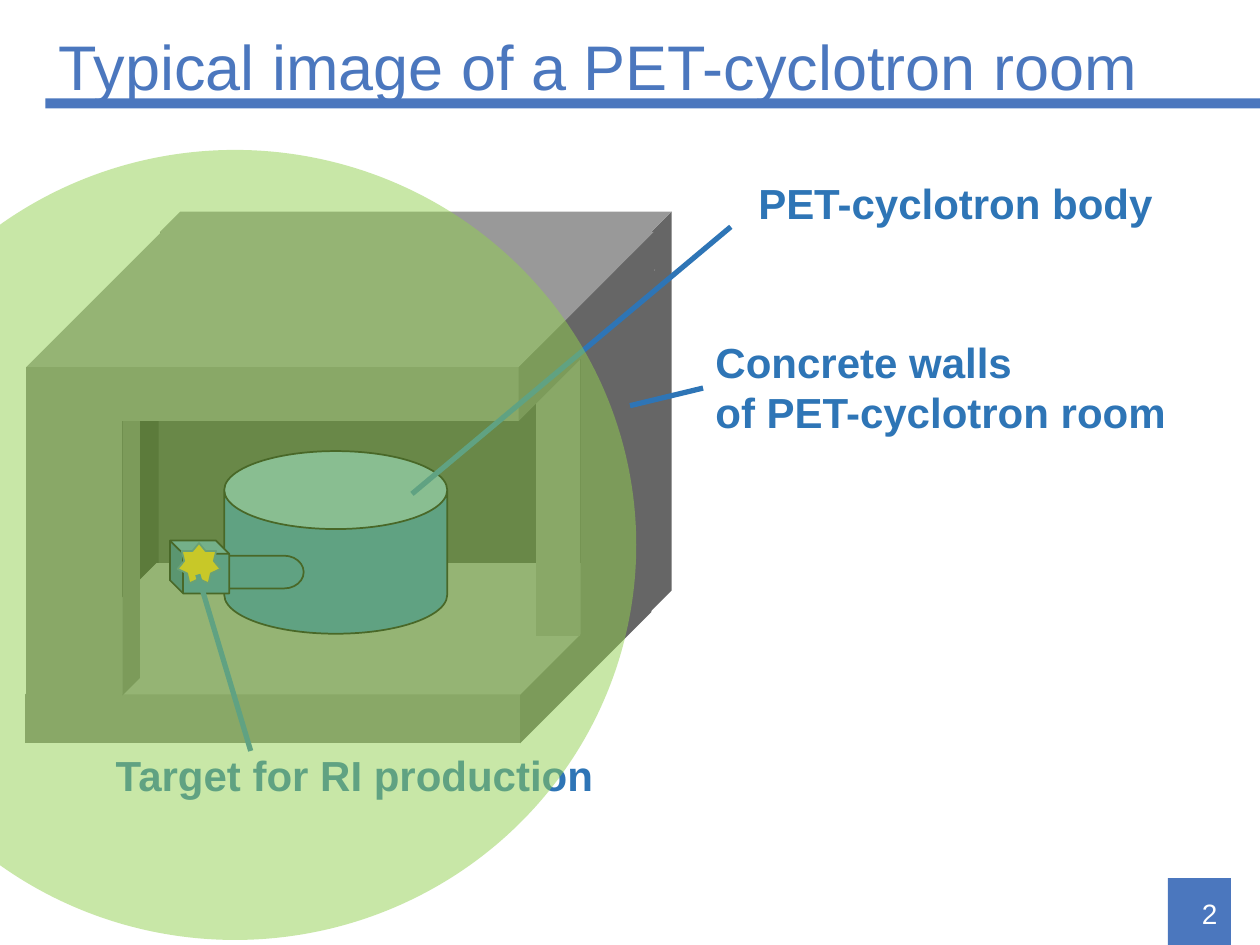
from collections import namedtuple

from lxml.etree import SubElement
from pptx import Presentation
from pptx.dml.color import RGBColor
from pptx.enum.shapes import MSO_CONNECTOR, MSO_SHAPE as SHAPE
from pptx.enum.text import MSO_ANCHOR as ANCHOR, MSO_AUTO_SIZE as AUTO, PP_ALIGN as ALIGN
from pptx.oxml.ns import qn
from pptx.util import Inches, Pt

# The slide is a grid of 100 columns by 75 rows of square cells.
CELL = Inches(0.1)
COLUMNS, ROWS = 100, 75

FONT = "Arial"
ACCENT, LABEL, WHITE = "4B77BE", "2E75B6", "FFFFFF"
CONCRETE, SIDE_SHADE, BACK_SHADE = "808080", "262626", "404040"
OUTLINE, GOLD, GOLD_EDGE, FIELD = "000000", "FFC000", "43739E", "92D050"

Box = namedtuple("Box", "left top width height")


def inside(box, left, top, width, height):
    """Return a box whose offset is counted from the corner of another."""
    return Box(box.left + left, box.top + top, width, height)


def cells(*values):
    return [round(value * CELL) for value in values]


def color(hex_string):
    return RGBColor.from_string(hex_string)


def add_shape(slide, kind, box, fill, line=None, adjust=None, alpha=None):
    shape = slide.shapes.add_shape(kind, *cells(*box))
    shape.shadow.inherit = False
    shape.fill.solid()
    shape.fill.fore_color.rgb = color(fill)
    if line:
        shape.line.color.rgb = color(line)
        shape.line.width = Pt(1)
    else:
        shape.line.fill.background()
    if adjust is not None:
        shape.adjustments[0] = adjust
    if alpha is not None:
        fill_color = shape._element.spPr.find(qn("a:solidFill"))[0]
        SubElement(fill_color, qn("a:alpha"), val=str(alpha * 1000))
    return shape


def add_text(slide, box, lines, size=24, ink=LABEL, bold=False, align=ALIGN.LEFT,
             anchor=ANCHOR.TOP, wrap=True, spacing=None):
    frame = slide.shapes.add_textbox(*cells(*box)).text_frame
    frame.word_wrap = wrap
    frame.auto_size = AUTO.NONE if wrap else AUTO.SHAPE_TO_FIT_TEXT
    frame.vertical_anchor = anchor
    for index, line in enumerate(lines):
        paragraph = frame.add_paragraph() if index else frame.paragraphs[0]
        paragraph.alignment = align
        paragraph.line_spacing = spacing
        run = paragraph.add_run()
        run.text = line
        run.font.name = FONT
        run.font.size = Pt(size)
        run.font.bold = bold
        run.font.color.rgb = color(ink)


def add_line(slide, start, end):
    line = slide.shapes.add_connector(MSO_CONNECTOR.STRAIGHT, *cells(*start, *end))
    line.line.color.rgb = color(LABEL)
    line.line.width = Pt(3)
    SubElement(line._element.spPr, qn("a:effectLst"))


def add_header(slide, box, title):
    add_shape(slide, SHAPE.RECTANGLE, inside(box, 0, 6, box.width, 0.8), ACCENT)
    add_text(slide, inside(box, 0.1, 0, 90, 7.5), [title], size=36, ink=ACCENT,
             anchor=ANCHOR.MIDDLE, spacing=0.9)


def add_page_number(slide, box, number):
    add_shape(slide, SHAPE.RECTANGLE, box, ACCENT)
    add_text(slide, inside(box, 0.1, 0.8, 4.8, 4), [str(number)], size=16, ink=WHITE,
             align=ALIGN.RIGHT, anchor=ANCHOR.MIDDLE)


def add_concrete_room(slide, box):
    parts = [
        (SHAPE.RECTANGLE, (4.3, 11.4, 6.5, 22.5), SIDE_SHADE, None),
        (SHAPE.CUBE, (10.7, 0, 40.6, 31.7), CONCRETE, 0.051),    # far wall
        (SHAPE.RECTANGLE, (10.6, 3.5, 38.2, 26.7), BACK_SHADE, None),
        (SHAPE.CUBE, (0, 27.9, 49.7, 14.3), CONCRETE, 0.729),    # floor
        (SHAPE.CUBE, (40.5, 4.6, 9.5, 29.1), CONCRETE, 0.624),   # right wall
        (SHAPE.CUBE, (0.1, 15.1, 9, 23.3), CONCRETE, 0.154),     # left wall
        (SHAPE.CUBE, (0.1, 1.6, 49.8, 15), CONCRETE, 0.715),     # ceiling
    ]
    for kind, place, fill, adjust in parts:
        add_shape(slide, kind, inside(box, *place), fill, adjust=adjust)


def add_cyclotron(slide, box):
    """Draw the body, the beam pipe and the target with its radiation star."""
    add_shape(slide, SHAPE.CAN, inside(box, 4.3, 0, 17.7, 14.5), LABEL, OUTLINE, adjust=0.427)
    pipe = add_shape(slide, SHAPE.FLOWCHART_DIRECT_ACCESS_STORAGE,
                     inside(box, 1.3, 8.3, 9.3, 2.6), LABEL, OUTLINE)
    pipe.rotation = 180
    target = add_shape(slide, SHAPE.CUBE, inside(box, 0, 7.1, 4.7, 4.2), LABEL, OUTLINE)
    target._element.spPr.find(qn("a:xfrm")).set("flipH", "1")
    add_shape(slide, SHAPE.STAR_7_POINT, inside(box, 0.6, 7.3, 3.4, 3.2), GOLD, GOLD_EDGE)


def add_callout(slide, box, lines, start, end):
    """Place a label; the line's ends are offsets from the label's corner."""
    add_text(slide, box, lines, bold=True, wrap=False)
    add_line(slide, *[(box.left + x, box.top + y) for x, y in (start, end)])


def main():
    presentation = Presentation()
    presentation.slide_width = COLUMNS * CELL
    presentation.slide_height = ROWS * CELL
    slide = presentation.slides.add_slide(presentation.slide_layouts[6])

    add_page_number(slide, Box(92.7, 69.7, 5, 5.3), 2)
    add_header(slide, Box(3.6, 1.8, COLUMNS - 3.6, 7.5), "Typical image of a PET-cyclotron room")
    add_concrete_room(slide, Box(2, 16.8, 51.3, 42.2))
    add_cyclotron(slide, Box(13.5, 35.8, 22, 14.5))
    add_callout(slide, Box(59.2, 13.6, 33.6, 5), ["PET-cyclotron body"],
                (-26.5, 25.6), (-1.2, 4.4))
    add_callout(slide, Box(55.8, 26.2, 38.1, 9.1), ["Concrete walls", "of PET-cyclotron room"],
                (-5.8, 6), (0, 4.6))
    add_callout(slide, Box(8.2, 59, 40.2, 5), ["Target for RI production"],
                (7.5, -13.4), (11.7, 0.6))
    add_shape(slide, SHAPE.OVAL, Box(-13.2, 11.9, 63.7, 62.7), FIELD, alpha=50)
    presentation.save("out.pptx")


if __name__ == "__main__":
    main()
